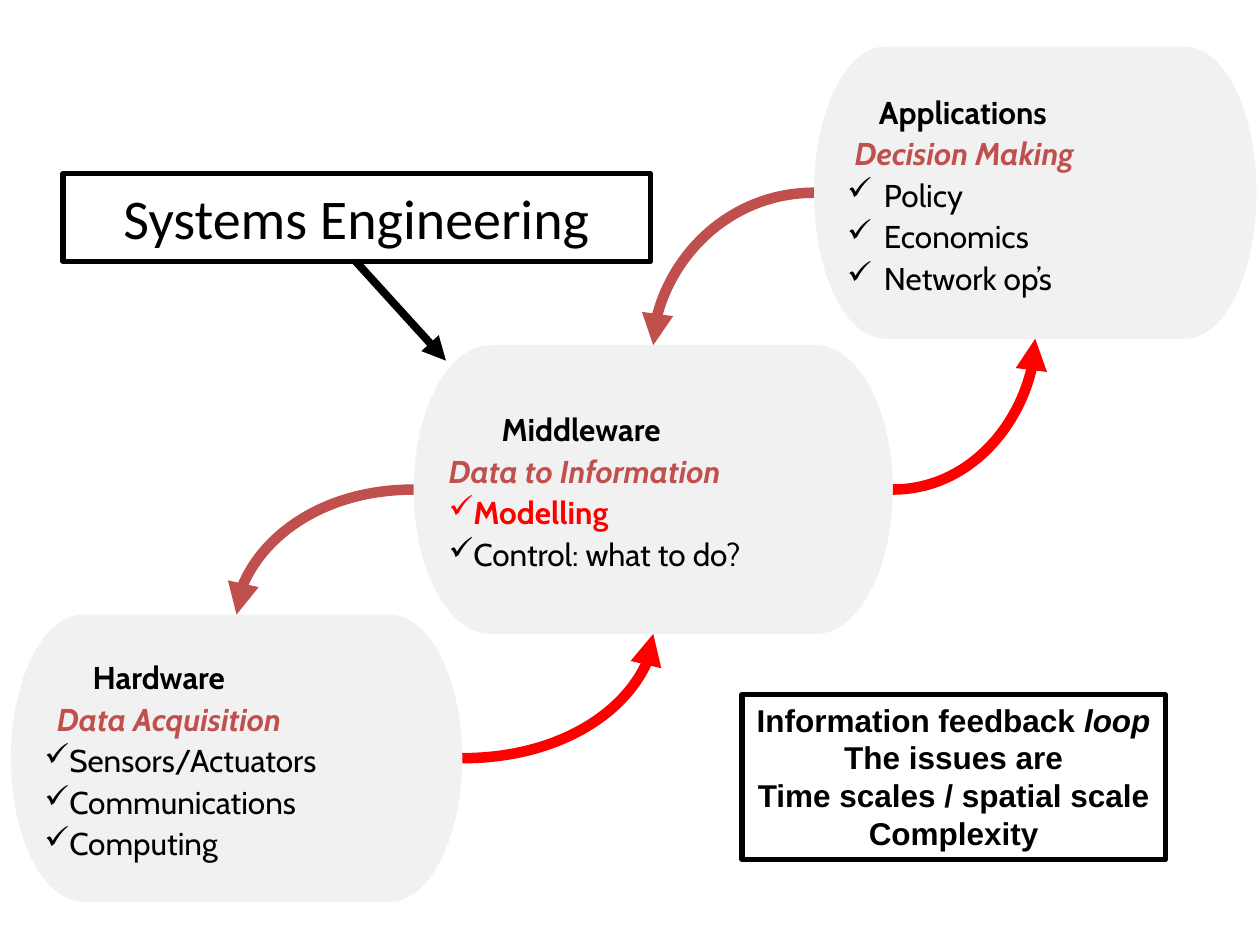
from lxml import etree
from pptx import Presentation
from pptx import util as u
from pptx.dml.color import RGBColor
from pptx.enum import shapes, text
from pptx.oxml.ns import qn

BLACK, RED, BRICK, GREY, WHITE = "000000", "FF0000", "C0504D", "F1F1F1", "FFFFFF"
TOP, LEFT, BOTTOM, RIGHT = range(4)  # connection sites


def rgb(color):
    return RGBColor.from_string(color)


def add_text(p, words, size=18, font="Cabin", color=BLACK, bold=False, italic=False,
             align=text.PP_ALIGN.LEFT, spacing=None, margin=0, hanging=0, bullet=None):
    p.alignment = align
    if spacing:
        p.line_spacing = spacing
    pPr = p._p.get_or_add_pPr()
    pPr.set("marL", str(u.Cm(margin)))
    pPr.set("indent", str(-u.Cm(hanging)))
    if bullet and pPr.find(qn("a:buChar")) is None:
        etree.SubElement(pPr, qn("a:buChar")).set("char", bullet)
    r = p.add_run()
    r.text = words
    r.font.name, r.font.size = font, u.Pt(size)
    r.font.bold, r.font.italic = bold, italic
    r.font.color.rgb = rgb(color)


prs = Presentation()
prs.slide_width, prs.slide_height = u.Cm(25.4), u.Cm(19.05)
s = prs.slides.add_slide(prs.slide_layouts[6])

# Layers: name, box, title margin, subtitle, subtitle margin, bullet indent, bullets
layers = [
    ("Hardware", (0.22, 12.39, 9.1, 5.79), 0.97, "Data Acquisition", 0.25, 0.48,
     ["Sensors/Actuators", "Communications", "Computing"]),
    ("Middleware", (8.34, 6.96, 9.66, 5.82), 1.07, "Data to Information", 0, 0.48,
     ["Modelling", "Control: what to do?"]),
    ("Applications", (16.41, 0.94, 8.92, 5.89), 0.64, "Decision Making", 0.15, 0.74,
     ["Policy", "Economics", "Network op’s"]),
]
boxes = {}
for name, box, title_margin, subtitle, sub_margin, indent, items in layers:
    sp = s.shapes.add_shape(shapes.MSO_SHAPE.FLOWCHART_TERMINATOR, *map(u.Cm, box))
    sp.shadow.inherit = False
    sp.fill.solid()
    sp.fill.fore_color.rgb = rgb(GREY)
    sp.line.fill.background()
    tf = sp.text_frame
    tf.word_wrap = False
    tf.vertical_anchor = text.MSO_ANCHOR.MIDDLE
    add_text(tf.paragraphs[0], name, bold=True, spacing=1.1, margin=title_margin)
    add_text(tf.add_paragraph(), subtitle, color=BRICK, bold=True, italic=True,
             spacing=1.1, margin=sub_margin)
    for item in items:
        key = item == "Modelling"
        add_text(tf.add_paragraph(), item, color=RED if key else BLACK, bold=key,
                 spacing=1.1, margin=indent, hanging=indent, bullet="✓")
    boxes[name] = sp

# Feedback loop arrows between the layers
arrows = []
for start, start_site, end, end_site, color in [
    ("Hardware", RIGHT, "Middleware", BOTTOM, RED),
    ("Middleware", RIGHT, "Applications", BOTTOM, RED),
    ("Applications", LEFT, "Middleware", TOP, BRICK),
    ("Middleware", LEFT, "Hardware", TOP, BRICK),
]:
    cxn = s.shapes.add_connector(shapes.MSO_CONNECTOR.CURVE, 0, 0, 0, 0)
    cxn.begin_connect(boxes[start], start_site)
    cxn.end_connect(boxes[end], end_site)
    cxn._element.spPr.find(qn("a:prstGeom")).set("prst", "curvedConnector2")
    arrows.append((cxn, color, 6))

# Issues box
sp = s.shapes.add_shape(shapes.MSO_SHAPE.RECTANGLE, *map(u.Cm, (14.96, 14, 8.53, 3.33)))
sp.shadow.inherit = False
sp.fill.background()
sp.line.color.rgb, sp.line.width = rgb(BLACK), u.Pt(3)
tf = sp.text_frame
tf.word_wrap = False
tf.auto_size = text.MSO_AUTO_SIZE.SHAPE_TO_FIT_TEXT
tf.vertical_anchor = text.MSO_ANCHOR.TOP
issue = dict(font="Arial", bold=True, align=text.PP_ALIGN.CENTER)
p = tf.paragraphs[0]
add_text(p, "Information feedback ", **issue)
add_text(p, "loop", italic=True, **issue)
for line in ["The issues are", "Time scales / spatial scale", "Complexity"]:
    add_text(tf.add_paragraph(), line, **issue)

# Systems Engineering box and its pointer
sp = s.shapes.add_shape(shapes.MSO_SHAPE.RECTANGLE, *map(u.Cm, (1.27, 3.5, 11.84, 1.77)))
sp.shadow.inherit = False
sp.fill.solid()
sp.fill.fore_color.rgb = rgb(WHITE)
sp.line.color.rgb, sp.line.width = rgb(BLACK), u.Pt(3)
tf = sp.text_frame
tf.word_wrap = False
tf.vertical_anchor = text.MSO_ANCHOR.MIDDLE
add_text(tf.paragraphs[0], "Systems Engineering", size=32, font="Calibri",
         align=text.PP_ALIGN.CENTER)
cxn = s.shapes.add_connector(shapes.MSO_CONNECTOR.STRAIGHT,
                             *map(u.Cm, (7.17, 5.27, 8.99, 7.27)))
arrows.append((cxn, BLACK, 4.5))

# Arrow style
for cxn, color, width in arrows:
    cxn.line.color.rgb, cxn.line.width = rgb(color), u.Pt(width)
    etree.SubElement(cxn.line._get_or_add_ln(), qn("a:tailEnd")).set("type", "triangle")
    etree.SubElement(cxn._element.spPr, qn("a:effectLst"))

prs.save("out.pptx")
